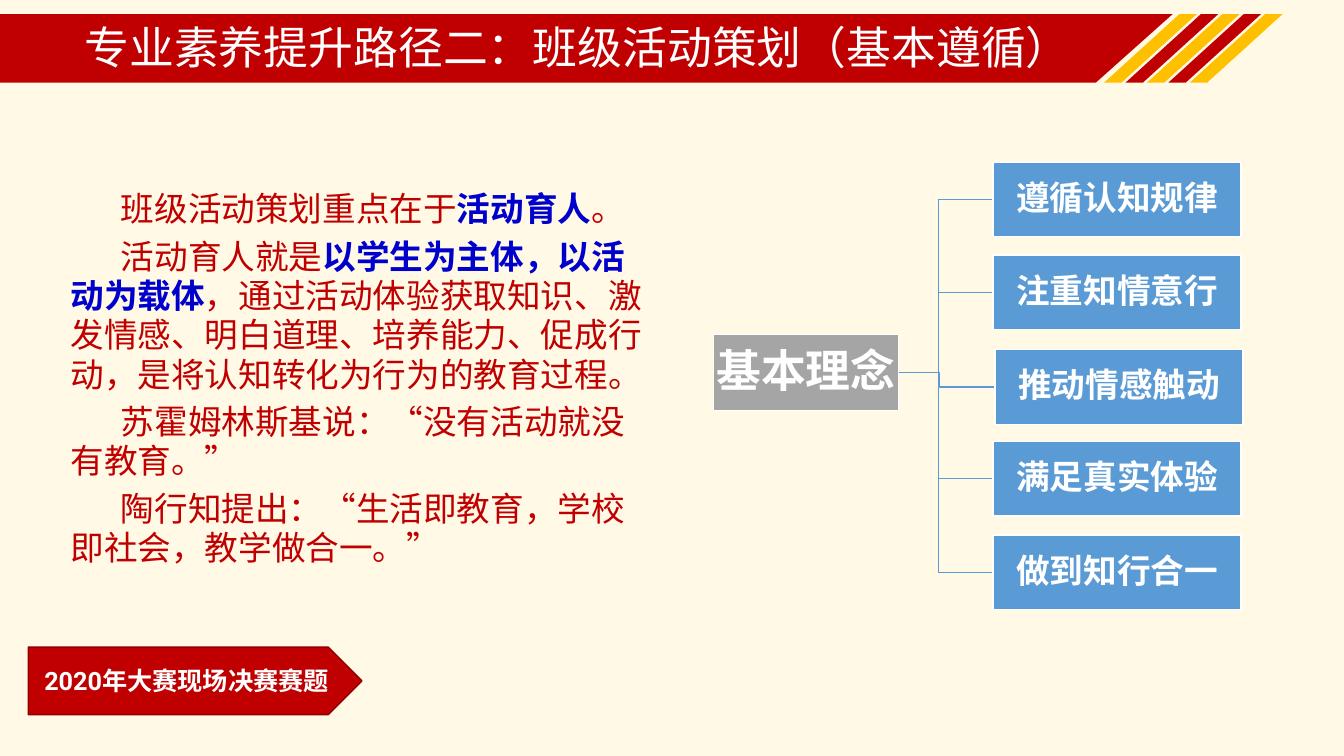
from pptx import Presentation
from pptx.dml.color import RGBColor
from pptx.enum.shapes import MSO_SHAPE as SHAPE
from pptx.enum.text import MSO_ANCHOR as ANCHOR, PP_ALIGN as ALIGN
from pptx.util import Inches, Pt

# Content
TITLE = "专业素养提升路径二：班级活动策划（基本遵循）"
# Each paragraph is a list of (text, emphasised)
BODY = [
    [("班级活动策划重点在于", False), ("活动育人", True), ("。", False)],
    [("活动育人就是", False), ("以学生为主体，以活动为载体", True),
     ("，通过活动体验获取知识、激发情感、明白道理、培养能力、促成行动，"
      "是将认知转化为行为的教育过程。", False)],
    [("苏霍姆林斯基说：“没有活动就没有教育。”", False)],
    [("陶行知提出：“生活即教育，学校即社会，教学做合一。”", False)],
]
ROOT = "基本理念"
# (text, left, top)
LEAVES = [
    ("遵循认知规律", 9.85, 1.61),
    ("注重知情意行", 9.85, 2.53),
    ("推动情感触动", 9.87, 3.47),
    ("满足真实体验", 9.85, 4.38),
    ("做到知行合一", 9.85, 5.31),
]
TAG = "2020年大赛现场决赛赛题"

THEME = {
    "paper": "FFF9E6", "red": "C00000", "gold": "FFC000", "dark_red": "8E0000",
    "blue": "5B9BD5", "grey": "A5A5A5", "white": "FFFFFF", "accent": "0000CC",
    "head_font": "Roboto", "body_font": "Times New Roman",
    "large": 32, "medium": 24, "small": 18,
}

# Layout, in inches
BAND_TOP, BAND_H = 0.14, 0.68
STRIPE_LEFT, STRIPE_W, STRIPE_STEP = 10.95, 0.92, 0.2125
ROOT_BOX = (7.08, 3.32, 1.83, 0.75)
LEAF_W, LEAF_H = 2.46, 0.74
TRUNK_X = 9.31


def color(name):
    return RGBColor.from_string(THEME[name])


def style(run, size, fill, font="head_font", bold=False):
    run.font.name, run.font.size = THEME[font], Pt(THEME[size])
    run.font.bold, run.font.color.rgb = bold, color(fill)


def add_block(kind, box, fill, line=None):
    s = slide.shapes.add_shape(kind, *map(Inches, box))
    s.shadow.inherit = False
    s.fill.solid()
    s.fill.fore_color.rgb = color(fill)
    if line:
        s.line.color.rgb, s.line.width = color(line), Pt(1)
    else:
        s.line.fill.background()
    return s


def add_label(s, text, size):
    tf = s.text_frame
    tf.text, tf.word_wrap, tf.vertical_anchor = text, False, ANCHOR.MIDDLE
    p = tf.paragraphs[0]
    p.alignment = ALIGN.CENTER
    style(p.runs[0], size, "white", bold=True)
    return tf


def add_node(box, text, size, fill):
    tf = add_label(add_block(SHAPE.RECTANGLE, box, fill, "white"), text, size)
    tf.margin_left = tf.margin_right = tf.margin_top = tf.margin_bottom = Inches(0.02)
    tf.paragraphs[0].line_spacing = 0.9
    tf.paragraphs[0].space_after = Pt(round(THEME[size] * 0.35))


def add_branch(points):
    start, *rest = [(Inches(x), Inches(y)) for x, y in points]
    builder = slide.shapes.build_freeform(*start)
    builder.add_line_segments(rest, close=False)
    s = builder.convert_to_shape()
    s.shadow.inherit = False
    s.fill.background()
    s.line.color.rgb, s.line.width = color("blue"), Pt(1)


def add_text(box):
    tf = slide.shapes.add_textbox(*map(Inches, box)).text_frame
    tf.word_wrap = True
    return tf


prs = Presentation()
prs.slide_width, prs.slide_height = Inches(13.33), Inches(7.5)
slide = prs.slides.add_slide(prs.slide_layouts[6])
slide.background.fill.solid()
slide.background.fill.fore_color.rgb = color("paper")

# Title band and slanted stripes
band = add_block(SHAPE.PARALLELOGRAM, (-0.91, BAND_TOP, 12.54, BAND_H), "red")
band.adjustments[0] = 1.12
for i in range(5):
    box = (STRIPE_LEFT + i * STRIPE_STEP, BAND_TOP, STRIPE_W, BAND_H)
    stripe = add_block(SHAPE.PARALLELOGRAM, box, "red" if i % 2 else "gold")
    stripe.adjustments[0] = 1.1

# Title
tf = add_text((0.74, 0.21, 11.5, 0.57))
tf.text, tf.vertical_anchor = TITLE, ANCHOR.MIDDLE
tf.paragraphs[0].line_spacing = 0.9
style(tf.paragraphs[0].runs[0], "large", "white")

# Body text
tf = add_text((0.6, 1.83, 5.98, 3.89))
for i, parts in enumerate(BODY):
    p = tf.add_paragraph() if i else tf.paragraphs[0]
    p.line_spacing, p.space_after = Pt(28), Pt(6)
    p_pr = p._p.get_or_add_pPr()
    p_pr.set("marL", "0")
    p_pr.set("indent", str(Inches(0.5)))
    for text, strong in parts:
        r = p.add_run()
        r.text = text
        style(r, "medium", "accent" if strong else "red", "body_font", strong)

# Tree: branches first, then the nodes
root_left, root_top, root_w, root_h = ROOT_BOX
root_right, root_mid = root_left + root_w, root_top + root_h / 2
for text, left, top in LEAVES:
    mid = top + LEAF_H / 2
    trunk = TRUNK_X + (left - LEAVES[0][1]) / 2
    add_branch([(root_right, root_mid), (trunk, root_mid), (trunk, mid), (left, mid)])
add_node(ROOT_BOX, ROOT, "large", "grey")
for text, left, top in LEAVES:
    add_node((left, top, LEAF_W, LEAF_H), text, "medium", "blue")

# Tag
tag = add_block(SHAPE.PENTAGON, (0.28, 6.42, 3.31, 0.67), "red", "dark_red")
add_label(tag, TAG, "small")

prs.save("out.pptx")
